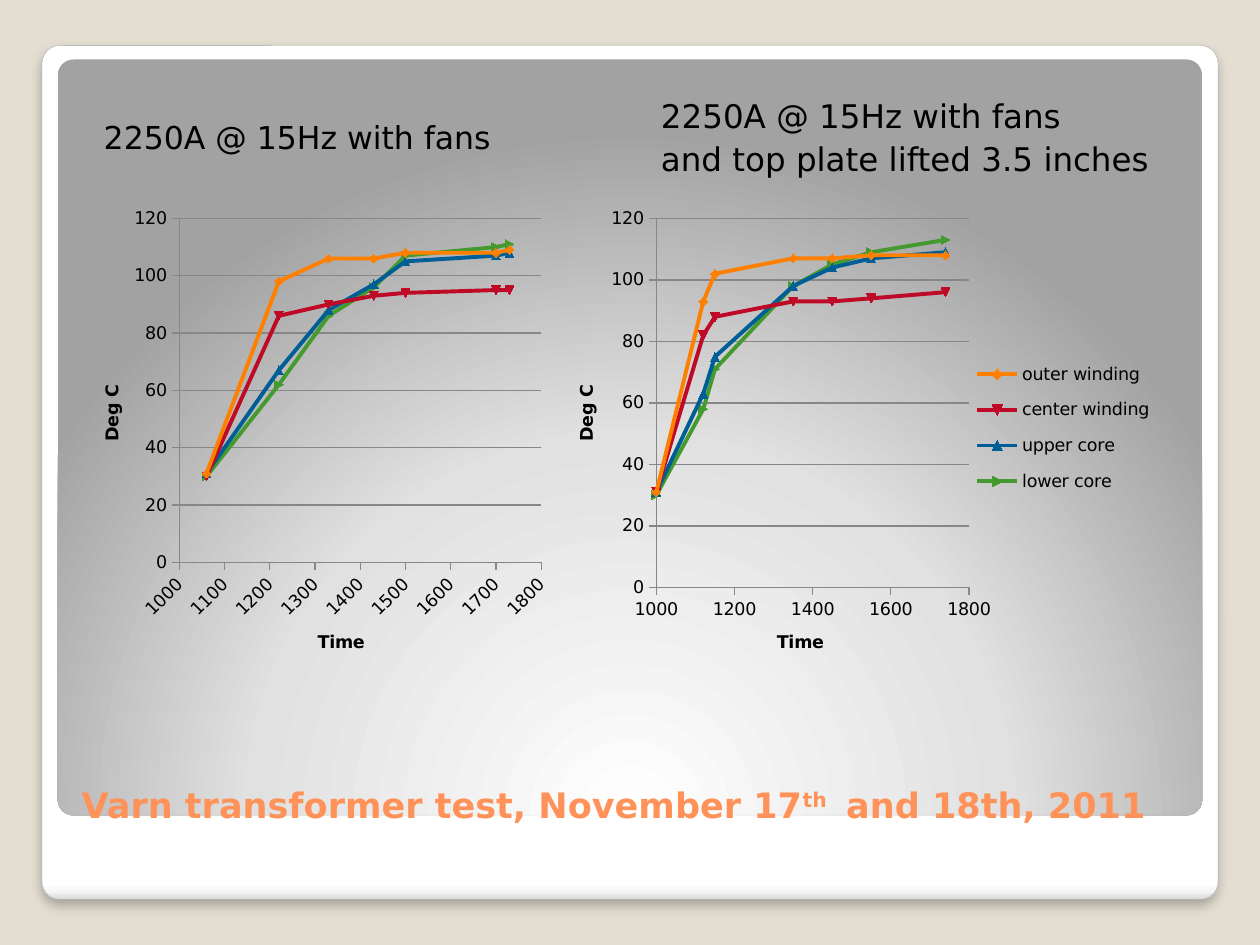
from lxml import etree
from pptx import Presentation
from pptx.chart.data import XyChartData
from pptx.dml.color import RGBColor
from pptx.enum.chart import (XL_CHART_TYPE as Kind, XL_LEGEND_POSITION as Side,
                             XL_MARKER_STYLE as Mark, XL_TICK_MARK as Tick)
from pptx.enum.shapes import MSO_SHAPE as Shape
from pptx.enum.text import MSO_ANCHOR as Anchor
from pptx.oxml import parse_xml
from pptx.oxml.ns import nsdecls, qn
from pptx.util import Pt

FONT = "DejaVu Sans"
COLORS = {"page": "E3DED1", "edge": "A4A4A4", "title": "FF9258", "text": "000000",
          "grid": "878787", "outer": "FF8000", "center": "BE0A26",
          "upper": "005E96", "lower": "459A2F"}
CARD = [(0, "FFFFFF"), (98, "FFFFFF"), (99, "F7F7F7"), (100, "DADADA")]
GLOW = [(0, "FFFFFF"), (55, "E1E1E1"), (100, "A2A2A2")]
SERIES = [("outer winding", "outer"), ("center winding", "center"),
          ("upper core", "upper"), ("lower core", "lower")]
FANS = {
    "times": [1060, 1220, 1330, 1430, 1500, 1700, 1730],
    "temps": [[31, 98, 106, 106, 108, 108, 109], [30, 86, 90, 93, 94, 95, 95],
              [31, 67, 88, 97, 105, 107, 108], [30, 62, 86, 96, 107, 110, 111]],
    "step": 100, "turn": -45, "plot": (0.22, 0.04, 0.75, 0.715),
    "time": (0.5, 0.89), "deg": (0.05, 0.38), "legend": None}
LIFTED = {
    "times": [1000, 1120, 1150, 1350, 1450, 1550, 1740],
    "temps": [[31, 93, 102, 107, 107, 108, 108], [31, 82, 88, 93, 93, 94, 96],
              [31, 63, 75, 98, 104, 107, 109], [30, 58, 71, 98, 105, 109, 113]],
    "step": 200, "turn": 0, "plot": (0.17, 0.04, 0.48, 0.767),
    "time": (0.35, 0.89), "deg": (0.04, 0.38), "legend": (0.65, 0.31, 0.29, 0.33)}


def rgb(name):
    return RGBColor.from_string(COLORS[name])


def style(font, size, color="text", bold=False):
    font.name, font.size, font.bold = FONT, Pt(size), bold
    font.color.rgb = rgb(color)


def shade(shape, stops, aim):
    """Fill with a gradient; aim is the XML that gives its direction."""
    shape.fill.background()
    marks = "".join(f'<a:gs pos="{at * 1000}"><a:srgbClr val="{tint}"/></a:gs>'
                    for at, tint in stops)
    grad = parse_xml(f'<a:gradFill {nsdecls("a")} rotWithShape="1">'
                     f'<a:gsLst>{marks}</a:gsLst>{aim}</a:gradFill>')
    props = shape._element.spPr
    props.replace(props.find(qn("a:noFill")), grad)


def panel(slide, box, stops, aim):
    shape = slide.shapes.add_shape(Shape.ROUNDED_RECTANGLE, *map(Pt, box))
    shape.adjustments[0] = 0.021
    shape.shadow.inherit = False
    shape.line.fill.background()
    shade(shape, stops, aim)
    return shape


def frame(slide, box):
    left, top, wide, high = box
    card = panel(slide, box, CARD, '<a:lin ang="5400000" scaled="0"/>')
    card.line.color.rgb = rgb("edge")
    card.line.width = Pt(0.16)
    effects = card._element.spPr.find(qn("a:effectLst"))
    effects.append(parse_xml(
        f'<a:outerShdw {nsdecls("a")} blurRad="{Pt(6)}" dist="{Pt(4)}" dir="5400000"'
        ' algn="t" rotWithShape="0"><a:srgbClr val="000000">'
        '<a:alpha val="25000"/></a:srgbClr></a:outerShdw>'))
    panel(slide, (left + 9, top + 8, wide - 18, high - 56), GLOW,
          '<a:path path="circle"><a:fillToRect l="50000" t="175000"'
          ' r="50000" b="-75000"/></a:path>')


def text(slide, box, anchor):
    body = slide.shapes.add_textbox(*map(Pt, box)).text_frame
    body.word_wrap = True
    body.vertical_anchor = anchor
    return body


def title(slide, box):
    para = text(slide, box, Anchor.BOTTOM).paragraphs[0]
    for words in ("Varn transformer test, November 17", "th ", " and 18th, 2011"):
        run = para.add_run()
        run.text = words
        style(run.font, 20, "title", True)
    para.runs[1].font._element.set("baseline", "30000")


def heading(slide, box, lines, size):
    body = text(slide, box, Anchor.MIDDLE)
    body.margin_left, body.margin_top = Pt(11.5), Pt(7)
    body.text = "\n".join(lines)
    for para in body.paragraphs:
        para.space_before = Pt(2.5)
        style(para.runs[0].font, size)


def place(part, spot, index, inner=False):
    """Give a chart part a manual layout, as fractions of the chart."""
    for old in part.findall(qn("c:layout")):
        part.remove(old)
    layout = etree.Element(qn("c:layout"))
    manual = etree.SubElement(layout, qn("c:manualLayout"))
    rules = [("layoutTarget", "inner")] if inner else []
    rules += [("xMode", "edge"), ("yMode", "edge"), *zip("xywh", spot)]
    for tag, value in rules:
        etree.SubElement(manual, qn(f"c:{tag}")).set("val", str(value))
    part.insert(index, layout)


def scale(axis, name, spot, low, high, step):
    axis.minimum_scale, axis.maximum_scale, axis.major_unit = low, high, step
    axis.major_tick_mark, axis.minor_tick_mark = Tick.OUTSIDE, Tick.NONE
    axis.format.line.color.rgb = rgb("grid")
    style(axis.tick_labels.font, 10)
    label = axis.axis_title
    label.text_frame.text = name
    style(label.text_frame.paragraphs[0].runs[0].font, 10, bold=True)
    place(label._element, spot, 1)


def graph(slide, box, test):
    data = XyChartData()
    for (name, _), temps in zip(SERIES, test["temps"]):
        line = data.add_series(name)
        for time, temp in zip(test["times"], temps):
            line.add_data_point(time, temp)
    chart = slide.shapes.add_chart(Kind.XY_SCATTER_LINES, *map(Pt, box), data).chart
    chart.has_title = False
    style(chart.font, 10)
    across, up = chart.category_axis, chart.value_axis
    scale(across, "Time", test["time"], 1000, 1800, test["step"])
    scale(up, "Deg C", test["deg"], 0, 120, 20)
    across.has_major_gridlines = False
    up.major_gridlines.format.line.color.rgb = rgb("grid")
    turns = ((across.tick_labels.font._element.getparent().getparent().getparent(),
              test["turn"]), (up.axis_title.text_frame._txBody, -90))
    for holder, angle in turns:
        holder.find(qn("a:bodyPr")).set("rot", str(angle * 60000))
    for line, (_, color) in zip(chart.plots[0].series, SERIES):
        line.smooth = False
        line.format.line.width = Pt(2.25)
        line.format.line.color.rgb = rgb(color)
        line.marker.style, line.marker.size = Mark.AUTOMATIC, 5
        for part in (line.marker.format.fill, line.marker.format.line.fill):
            part.solid()
            part.fore_color.rgb = rgb(color)
    place(chart._chartSpace.chart.plotArea, test["plot"], 0, True)
    chart.has_legend = bool(test["legend"])
    if chart.has_legend:
        chart.legend.position = Side.RIGHT
        chart.legend.include_in_layout = False
        style(chart.legend.font, 10)
        place(chart.legend._element, test["legend"], 1)


def main():
    deck = Presentation()
    deck.slide_width, deck.slide_height = Pt(720), Pt(540)
    slide = deck.slides.add_slide(deck.slide_layouts[6])
    slide.background.fill.solid()
    slide.background.fill.fore_color.rgb = rgb("page")
    frame(slide, (24, 26, 672, 488))
    title(slide, (39.6, 392.4, 644.4, 82.8))
    heading(slide, (47.8, 45.4, 309.6, 62.6), ["2250A @ 15Hz with fans"], 18)
    heading(slide, (366.2, 45.4, 309.6, 62.6),
            ["2250A @ 15Hz with fans", "and top plate lifted 3.5 inches"], 18.6)
    graph(slide, (41.8, 113.8, 275.8, 275), FANS)
    graph(slide, (311.8, 113.8, 372.2, 275), LIFTED)
    deck.save("out.pptx")


if __name__ == "__main__":
    main()
